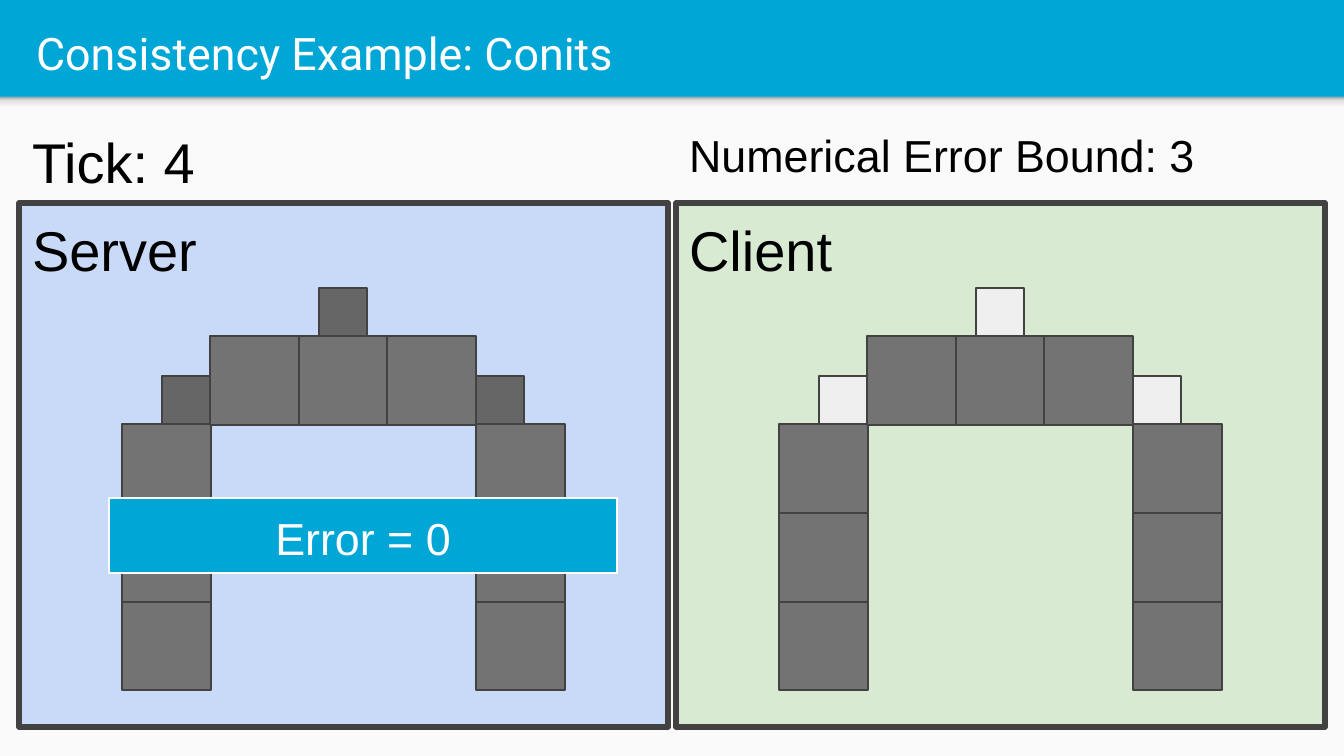
from dataclasses import dataclass

from lxml.etree import SubElement
from pptx import Presentation
from pptx.dml.color import RGBColor
from pptx.enum.shapes import MSO_SHAPE
from pptx.enum.text import MSO_ANCHOR, PP_ALIGN
from pptx.oxml.ns import qn
from pptx.util import Emu, Pt


@dataclass(frozen=True)
class Theme:
    accent: str = "00A6D6"
    paper: str = "FAFAFA"
    white: str = "FFFFFF"
    text: str = "000000"
    outline: str = "424242"
    server: str = "C9DAF8"
    client: str = "D9EAD3"
    block: str = "737373"
    placed: str = "666666"
    missing: str = "EFEFEF"
    shadow: tuple = ((0, "999999"), (20, "DEDEDE"), (64, "F9F9F9"), (100, "F9F9F9"))
    title_font: str = "Roboto"
    body_font: str = "Arial"
    large: int = 30
    medium: int = 24
    thick: float = 3
    thin: float = 0.75


THEME = Theme()
PAGE_WIDTH, PAGE_HEIGHT = 1344, 756
HEADER_HEIGHT = 97
INSET = 13
PANEL_TOP, PANEL_WIDTH, PANEL_HEIGHT = 203, 649, 524
LABEL_TOP, LABEL_HEIGHT = 115, 88
ARCH_INDENT, ARCH_TOP, ARCH_WIDTH = 103, 336, 443
COLUMNS = 5
BLOCK, SMALL_BLOCK = 89, 48
# Column and row of each large block: two pillars and the span between them
ARCH_BLOCKS = [(column, row) for column in (0, 4) for row in (3, 2, 1)]
ARCH_BLOCKS += [(column, 0) for column in (1, 2, 3)]


def px(length):
    return Emu(round(length * 914400 / 134.4))


def set_values(target, values):
    for name, value in values.items():
        setattr(target, name, value)


def write(shape, text, size, color=THEME.text, font=THEME.body_font,
          align=PP_ALIGN.LEFT, anchor=MSO_ANCHOR.TOP):
    frame = shape.text_frame
    margins = {f"margin_{side}": px(INSET) for side in ("left", "top", "right", "bottom")}
    set_values(frame, {"word_wrap": True, "vertical_anchor": anchor, **margins})
    para = frame.paragraphs[0]
    para.alignment = align
    span = para.add_run()
    span.text = text
    set_values(span.font, {"name": font, "size": Pt(size), "bold": False})
    span.font.color.rgb = RGBColor.from_string(color)


def add_title(page, text):
    title = page.shapes.title
    set_values(title, {"left": px(23), "top": px(8), "width": px(1297), "height": px(89)})
    write(title, text, THEME.medium, THEME.white, THEME.title_font,
          anchor=MSO_ANCHOR.MIDDLE)


def add_label(page, left, text, size):
    box = page.shapes.add_textbox(px(left), px(LABEL_TOP), px(PANEL_WIDTH), px(LABEL_HEIGHT))
    write(box, text, size)


def add_box(page, left, top, width, height, fill, line=None, weight=THEME.thin):
    box = page.shapes.add_shape(MSO_SHAPE.RECTANGLE, px(left), px(top), px(width), px(height))
    box.shadow.inherit = False
    box.fill.solid()
    box.fill.fore_color.rgb = RGBColor.from_string(fill)
    if line:
        box.line.color.rgb = RGBColor.from_string(line)
        box.line.width = Pt(weight)
    else:
        box.line.fill.background()
    return box


def add_header_shadow(page):
    """Fade from the header's lower edge into the paper."""
    strip = add_box(page, 0, HEADER_HEIGHT, PAGE_WIDTH, 16, THEME.paper)
    strip.fill.gradient()
    strip.fill.gradient_angle = 270
    stops = strip._element.spPr.find(".//" + qn("a:gsLst"))
    stops.clear()
    for position, color in THEME.shadow:
        stop = SubElement(stops, qn("a:gs"), pos=str(position * 1000))
        SubElement(stop, qn("a:srgbClr"), val=color)


def add_panel(page, left, name, fill):
    panel = add_box(page, left, PANEL_TOP, PANEL_WIDTH, PANEL_HEIGHT, fill,
                    THEME.outline, THEME.thick)
    write(panel, name, THEME.large)


def add_arch(page, panel_left, small_fill):
    """Draw the arch of large blocks, with three small blocks on its ledges."""
    def step(index):
        return index * ARCH_WIDTH // COLUMNS

    left = panel_left + ARCH_INDENT
    for column, row in ARCH_BLOCKS:
        add_box(page, left + step(column), ARCH_TOP + step(row), BLOCK, BLOCK,
                THEME.block, THEME.outline)

    ledge = ARCH_TOP + step(1)
    for x, base in ((left + step(1) - SMALL_BLOCK, ledge),
                    (left + step(4), ledge),
                    (left + (ARCH_WIDTH - SMALL_BLOCK) // 2, ARCH_TOP)):
        add_box(page, x, base - SMALL_BLOCK, SMALL_BLOCK, SMALL_BLOCK,
                small_fill, THEME.outline)


def add_error_banner(page, text):
    banner = add_box(page, 109, 498, 508, 75, THEME.accent, THEME.white)
    write(banner, text, THEME.medium, THEME.white, align=PP_ALIGN.CENTER)


def main():
    deck = Presentation()
    set_values(deck, {"slide_width": px(PAGE_WIDTH), "slide_height": px(PAGE_HEIGHT)})
    page = deck.slides.add_slide(deck.slide_layouts.get_by_name("Title Only"))
    page.background.fill.solid()
    page.background.fill.fore_color.rgb = RGBColor.from_string(THEME.accent)

    add_title(page, "Consistency Example: Conits")
    add_box(page, 0, HEADER_HEIGHT, PAGE_WIDTH, PAGE_HEIGHT - HEADER_HEIGHT, THEME.paper)
    add_header_shadow(page)

    for left, name, fill, small_fill, label, size in (
        (19, "Server", THEME.server, THEME.placed, "Tick: 4", THEME.large),
        (676, "Client", THEME.client, THEME.missing, "Numerical Error Bound: 3", THEME.medium),
    ):
        add_label(page, left, label, size)
        add_panel(page, left, name, fill)
        add_arch(page, left, small_fill)
    add_error_banner(page, "Error = 0")

    deck.save("out.pptx")


if __name__ == "__main__":
    main()
